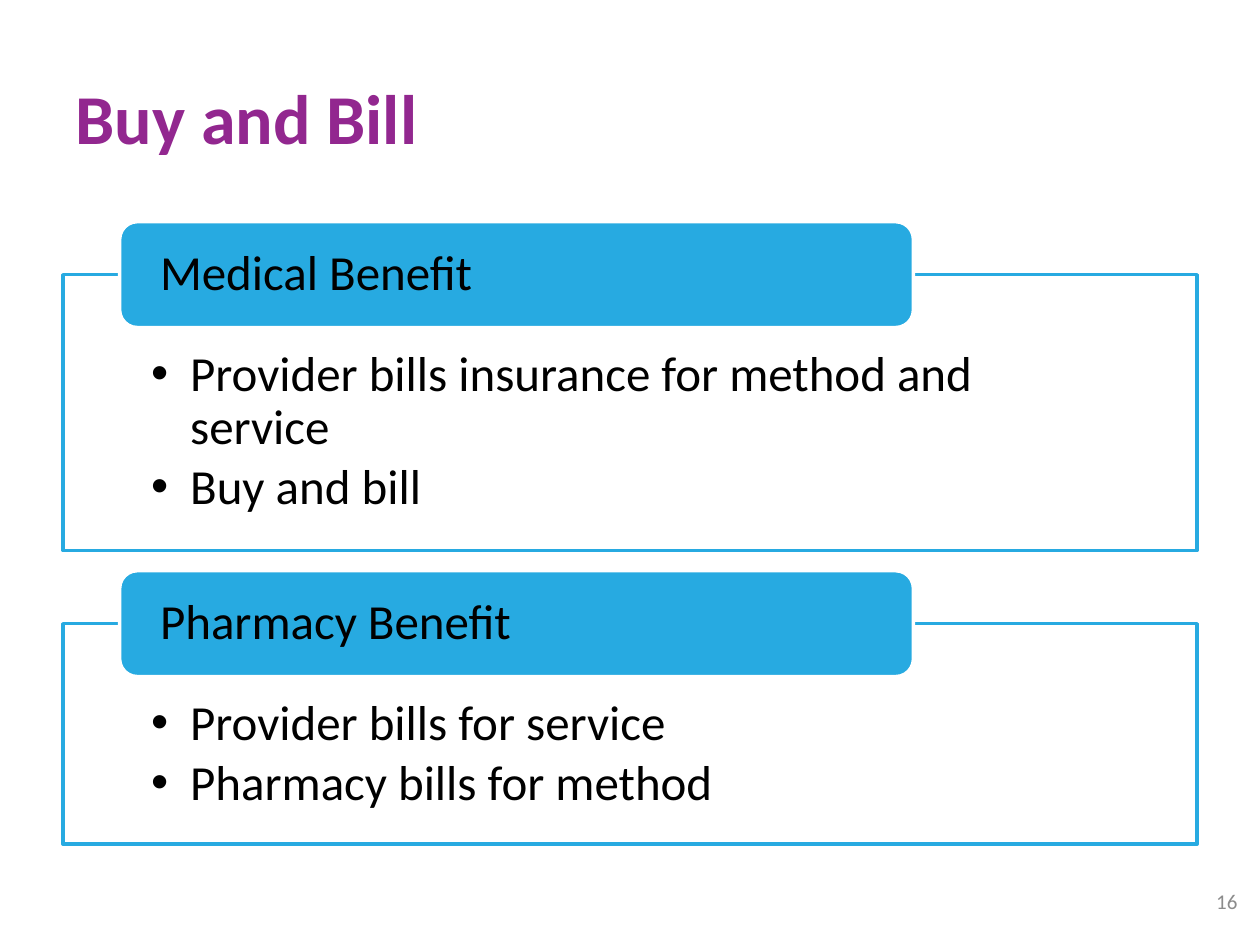
from lxml import etree
from pptx import Presentation
from pptx import util as u
from pptx.dml.color import RGBColor
from pptx.enum import shapes, text
from pptx.oxml.ns import qn

PURPLE = RGBColor(0x92, 0x27, 0x8F)
BLUE = RGBColor(0x27, 0xAA, 0xE1)
WHITE = RGBColor(0xFF, 0xFF, 0xFF)
BLACK = RGBColor(0, 0, 0)
GREY = RGBColor(0x8C, 0x8C, 0x8C)

COLUMNS, ROWS = 100, 75
LEFT, WIDTH = 5, 90
HEADER_LEFT, HEADER_WIDTH, HEADER_HEIGHT = 9.5, 63, 8.4
FIRST_TOP, GAP = 21.8, 5.8
BENEFITS = [
    ("Medical Benefit", 21.9,
     ["Provider bills insurance for method and service", "Buy and bill"]),
    ("Pharmacy Benefit", 17.5,
     ["Provider bills for service", "Pharmacy bills for method"]),
]


class SlideBuilder:
    font = "Calibri"

    def __init__(self, deck):
        self.cell_width = deck.slide_width / COLUMNS
        self.cell_height = deck.slide_height / ROWS
        self.slide = deck.slides.add_slide(deck.slide_layouts[5])

    def place(self, left, top, width, height):
        return [u.Emu(round(cells * size)) for cells, size in zip(
            (left, top, width, height), (self.cell_width, self.cell_height) * 2)]

    def apply(self, target, **values):
        for name, value in values.items():
            setattr(target, name, value)

    def fill_text(self, box, lines, size, color, bold=False,
                  anchor=text.MSO_ANCHOR.MIDDLE, insets=(0.1, 0.05, 0.1, 0.05),
                  bullets=False, **spacing):
        frame = box.text_frame
        sides = ("margin_left", "margin_top", "margin_right", "margin_bottom")
        self.apply(frame, word_wrap=True, auto_size=text.MSO_AUTO_SIZE.NONE,
                   vertical_anchor=anchor,
                   **{side: u.Inches(inset) for side, inset in zip(sides, insets)})
        for index, line in enumerate(lines):
            para = frame.paragraphs[0] if index == 0 else frame.add_paragraph()
            para.text = line
            self.apply(para, **{"alignment": text.PP_ALIGN.LEFT, **spacing})
            if bullets:
                self.add_bullet(para)
            span = para.runs[0]
            self.apply(span.font, name=self.font, size=u.Pt(size), bold=bold)
            span.font.color.rgb = color

    def add_bullet(self, para):
        properties = para._p.get_or_add_pPr()
        properties.set("marL", str(u.Inches(0.31)))
        properties.set("indent", str(-u.Inches(0.31)))
        etree.SubElement(properties, qn("a:buFont")).set("typeface", "Arial")
        etree.SubElement(properties, qn("a:buChar")).set("char", "•")

    def title(self, line, *cells):
        box = self.slide.shapes.title
        self.apply(box, **dict(zip(("left", "top", "width", "height"), self.place(*cells))))
        self.fill_text(box, [line], 40, PURPLE, bold=True)

    def label(self, line, *cells):
        box = self.slide.shapes.add_textbox(*self.place(*cells))
        self.fill_text(box, [line], 12, GREY, alignment=text.PP_ALIGN.RIGHT)

    def shape(self, kind, cells, fill, line):
        box = self.slide.shapes.add_shape(kind, *self.place(*cells))
        box.shadow.inherit = False
        box.fill.solid()
        box.fill.fore_color.rgb = fill
        box.line.color.rgb = line
        box.line.width = u.Pt(2)
        return box

    def panel(self, lines, *cells):
        box = self.shape(shapes.MSO_SHAPE.RECTANGLE, cells, WHITE, BLUE)
        color = box._element.spPr.find(qn("a:solidFill"))[0]
        etree.SubElement(color, qn("a:alpha")).set("val", "90000")
        self.fill_text(box, lines, 28, BLACK, anchor=text.MSO_ANCHOR.TOP,
                       insets=(0.7, 0.59, 0.7, 0.22), bullets=True,
                       level=1, line_spacing=0.9, space_after=u.Pt(4.2))

    def header(self, line, *cells):
        box = self.shape(shapes.MSO_SHAPE.ROUNDED_RECTANGLE, cells, BLUE, WHITE)
        self.fill_text(box, [line], 28, BLACK, insets=(0.28, 0.04, 0.28, 0.04),
                       line_spacing=0.9)


def main():
    deck = Presentation()
    deck.slide_width, deck.slide_height = u.Inches(10), u.Inches(7.5)
    builder = SlideBuilder(deck)
    builder.title("Buy and Bill", LEFT, 3, 54.2, 12.5)
    top = FIRST_TOP
    for heading, height, points in BENEFITS:
        builder.panel(points, LEFT, top, WIDTH, height)
        builder.header(heading, HEADER_LEFT, top - HEADER_HEIGHT / 2,
                       HEADER_WIDTH, HEADER_HEIGHT)
        top += height + GAP
    builder.label("16", 94.2, 69.5, 5, 4)
    deck.save("out.pptx")


if __name__ == "__main__":
    main()
